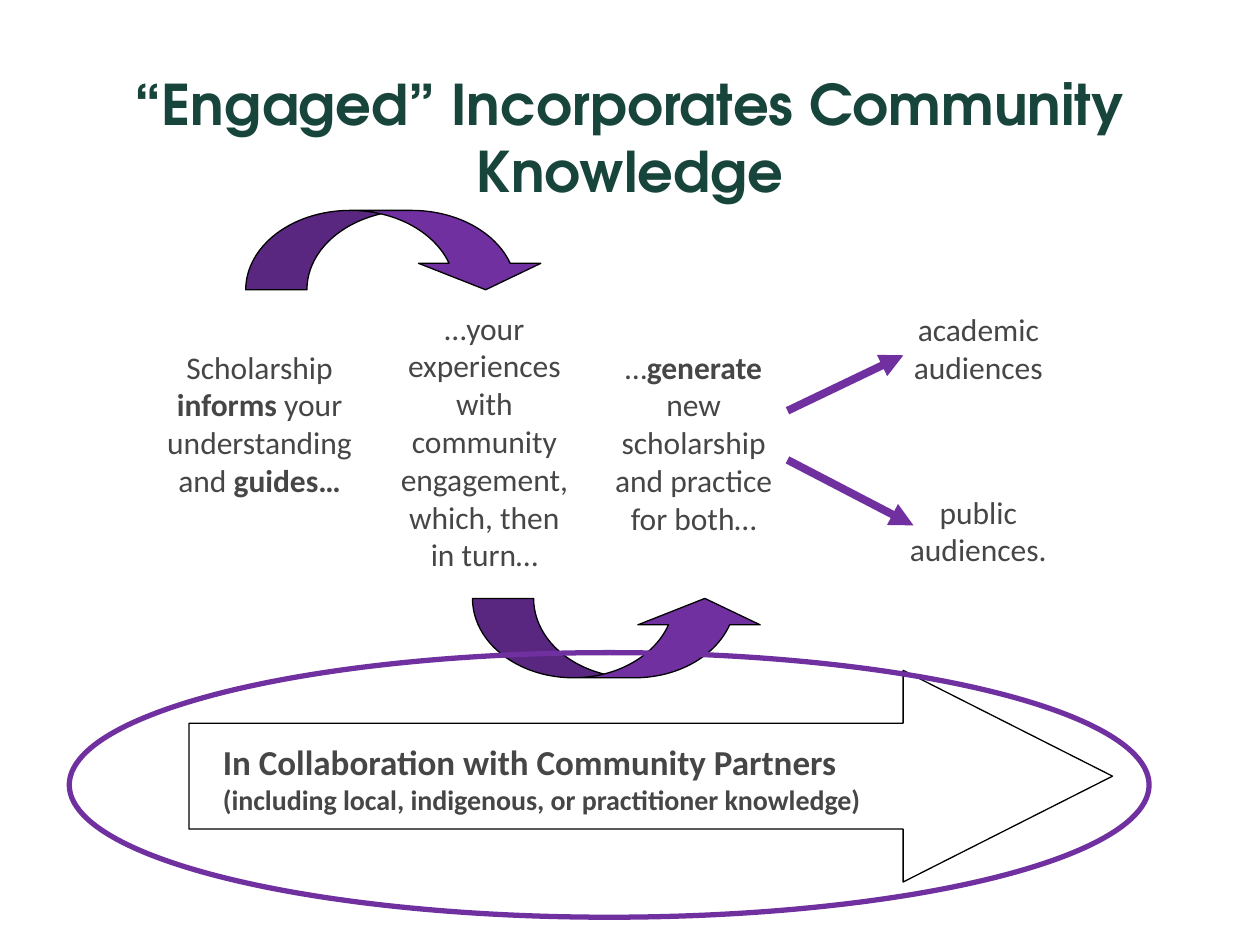
from lxml.etree import SubElement as Sub
from pptx import Presentation
from pptx.dml.color import RGBColor as RGB
from pptx.enum.shapes import MSO_CONNECTOR as LINK, MSO_SHAPE as SHAPE
from pptx.enum.text import MSO_ANCHOR as ANCHOR, MSO_AUTO_SIZE as AUTO, PP_ALIGN as ALIGN
from pptx.oxml.ns import qn
from pptx.util import Inches, Pt

GREEN = RGB(0x18, 0x45, 0x3B)
GREY = RGB(0x46, 0x46, 0x46)
PURPLE = RGB(0x70, 0x30, 0xA0)
BLACK = RGB(0, 0, 0)
WHITE = RGB(255, 255, 255)

NOTES = [
    ((1.17, 2.71, 1.78, 1.65), [("Scholarship ", False), ("informs", True),
                                (" your understanding and ", False), ("guides…", True)]),
    ((3.08, 2.4, 1.53, 2.22), [("…your experiences with community engagement, "
                                "which, then in turn…", False)]),
    ((4.67, 2.71, 1.67, 1.62), [("…", False), ("generate ", True),
                                ("new scholarship and practice for both…", False)]),
    ((7, 3.86, 1.53, 0.89), [("public audiences.", False)]),
    ((7, 2.41, 1.53, 0.89), [("academic audiences", False)]),
]


def style(font, name, size, color):
    """Set the face, size and colour of a font."""
    font.name, font.size = name, Pt(size)
    font.color.rgb = color


def add_title(slide, text):
    """Place and fill the title."""
    title = slide.shapes.title
    title.left, title.top = Inches(0.5), Inches(0.75)
    title.width, title.height = Inches(9), Inches(0.67)
    frame = title.text_frame
    frame.text, frame.word_wrap = text, True
    frame.auto_size, frame.vertical_anchor = AUTO.NONE, ANCHOR.MIDDLE
    para = frame.paragraphs[0]
    para.alignment = ALIGN.CENTER
    style(para.font, "TeX Gyre Adventor", 32, GREEN)
    para.font.bold = True


def add_text(slide, place, align, grow):
    """Add a white text box and return its paragraph."""
    box = slide.shapes.add_textbox(*map(Inches, place))
    box.fill.solid()
    box.fill.fore_color.rgb = WHITE
    frame = box.text_frame
    frame.word_wrap = True
    frame.auto_size = AUTO.SHAPE_TO_FIT_TEXT if grow else AUTO.NONE
    para = frame.paragraphs[0]
    para.alignment, para.space_after = align, Pt(10)
    style(para.font, "Calibri", 18, GREY)
    return para


def add_note(slide, place, parts):
    """Add a centred note with plain and bold parts."""
    para = add_text(slide, place, ALIGN.CENTER, True)
    for text, bold in parts:
        run = para.add_run()
        run.text, run.font.bold = text, bold


def add_label(slide, place, parts):
    """Add a bold label with parts of different sizes."""
    para = add_text(slide, place, ALIGN.LEFT, False)
    para.font.bold = True
    for text, size in parts:
        run = para.add_run()
        run.text, run.font.size = text, Pt(size)


def add_form(slide, kind, place, fill, line, width, adjust=()):
    """Add a preset shape, unfilled if fill is None."""
    form = slide.shapes.add_shape(kind, *map(Inches, place))
    form.shadow.inherit = False
    if fill is None:
        form.fill.background()
    else:
        form.fill.solid()
        form.fill.fore_color.rgb = fill
    form.line.color.rgb, form.line.width = line, Pt(width)
    for spot, value in enumerate(adjust):
        form.adjustments[spot] = value
    return form


def add_curve(slide, place, flip=False):
    """Add a curved arrow, flipped upside down on demand."""
    curve = add_form(slide, SHAPE.CURVED_DOWN_ARROW, place, PURPLE, BLACK, 0.75,
                     (0.771, 1.542, 0.333))
    if flip:
        curve._element.spPr.find(qn("a:xfrm")).set("flipV", "1")


def add_arrow(slide, start, end):
    """Add a straight line with an arrowhead at its end."""
    link = slide.shapes.add_connector(LINK.STRAIGHT, *map(Inches, start + end))
    link.line.color.rgb, link.line.width = PURPLE, Pt(4.5)
    Sub(link.line._get_or_add_ln(), qn("a:tailEnd"), type="triangle")
    Sub(link._element.spPr, qn("a:effectLst"))


def main():
    """Build and save the slide."""
    deck = Presentation()
    deck.slide_width, deck.slide_height = Inches(10), Inches(7.5)
    slide = deck.slides.add_slide(deck.slide_layouts[5])
    add_title(slide, "“Engaged” Incorporates Community Knowledge")
    add_form(slide, SHAPE.RIGHT_ARROW, (1.5, 5.32, 7.33, 1.68), WHITE, BLACK, 0.75,
             (0.5, 0.989))
    for place, parts in NOTES:
        add_note(slide, place, parts)
    add_curve(slide, (1.95, 1.67, 2.39, 0.63))
    add_curve(slide, (3.75, 4.75, 2.33, 0.63), flip=True)
    add_arrow(slide, (6.25, 3.65), (7.25, 4.17))
    add_arrow(slide, (6.25, 3.26), (7.17, 2.82))
    add_label(slide, (1.67, 5.83, 5.75, 0.61),
              [("In Collaboration with Community Partners ", 20),
               ("(including local, indigenous, or practitioner knowledge)", 16)])
    add_form(slide, SHAPE.OVAL, (0.55, 5.18, 8.57, 2.1), None, PURPLE, 3)
    deck.save("out.pptx")


if __name__ == "__main__":
    main()
